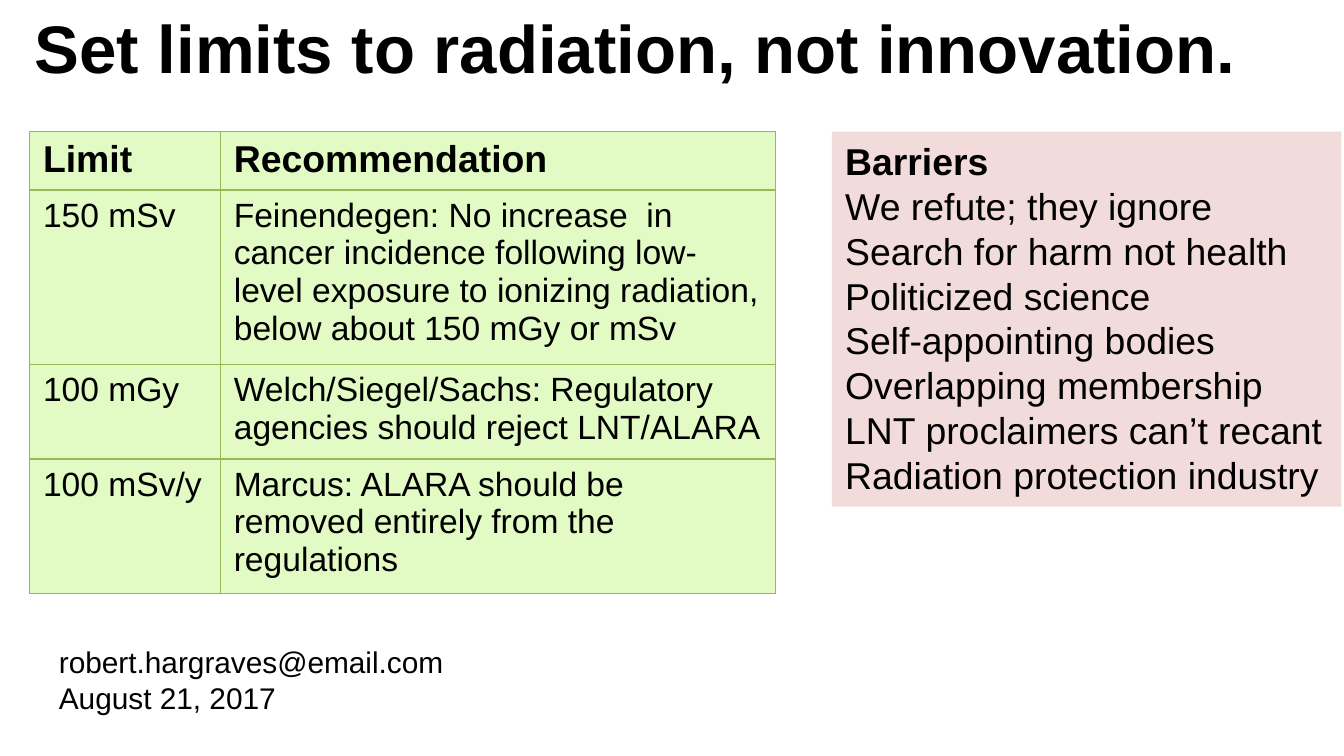
from dataclasses import dataclass

from lxml.etree import SubElement
from pptx import Presentation
from pptx.dml.color import RGBColor
from pptx.enum.shapes import MSO_SHAPE
from pptx.enum.text import MSO_ANCHOR, PP_ALIGN
from pptx.oxml.ns import qn
from pptx.slide import Slide
from pptx.table import _Cell
from pptx.text.text import TextFrame
from pptx.util import Inches, Pt

BLACK = RGBColor(0x00, 0x00, 0x00)
PINK = RGBColor(0xF2, 0xDC, 0xDB)
PALE_GREEN = RGBColor(0xE2, 0xFA, 0xC3)
BORDER_GREEN = RGBColor(0x98, 0xB9, 0x55)
FONT = "Arial"
SLIDE_WIDTH = 10
SLIDE_HEIGHT = SLIDE_WIDTH * 9 / 16


@dataclass(frozen=True)
class TextBlock:
    left: float
    top: float
    width: float
    height: float
    lines: tuple[str, ...]
    size: int
    bold_lines: int = 0
    fill: RGBColor | None = None


@dataclass(frozen=True)
class LimitRow:
    limit: str
    recommendation: str
    height: float
    size: int = 18
    bold: bool = False


BLOCKS = (
    TextBlock(0.16, 0, 9.79, 0.71, ("Set limits to radiation, not innovation.",), 36, 1),
    TextBlock(0.34, 4.74, 3.47, 0.64, ("robert.hargraves@email.com", "August 21, 2017"), 16),
    TextBlock(
        6.19, 0.98, 3.79, 2.79,
        (
            "Barriers",
            "We refute; they ignore",
            "Search for harm not health",
            "Politicized science",
            "Self-appointing bodies",
            "Overlapping membership",
            "LNT proclaimers can’t recant",
            "Radiation protection industry",
        ),
        20, 1, PINK,
    ),
)

COLUMN_WIDTHS = (1.42, 4.13)
ROWS = (
    LimitRow("Limit", "Recommendation", 0.43, 20, True),
    LimitRow(
        "150 mSv",
        "Feinendegen: No increase  in cancer incidence following low-level "
        "exposure to ionizing radiation, below about 150 mGy or mSv",
        1.3,
    ),
    LimitRow("100 mGy", "Welch/Siegel/Sachs: Regulatory agencies should reject LNT/ALARA", 0.7),
    LimitRow("100 mSv/y", "Marcus: ALARA should be removed entirely from the regulations", 1.0),
)


def write_lines(text_frame: TextFrame, lines: tuple[str, ...], size: int, bold_lines: int) -> None:
    text_frame.text = "\n".join(lines)
    text_frame.word_wrap = True
    for index, paragraph in enumerate(text_frame.paragraphs):
        paragraph.alignment = PP_ALIGN.LEFT
        for run in paragraph.runs:
            run.font.name = FONT
            run.font.size = Pt(size)
            run.font.bold = index < bold_lines
            run.font.color.rgb = BLACK


def add_text_block(slide: Slide, block: TextBlock) -> None:
    box = [Inches(length) for length in (block.left, block.top, block.width, block.height)]
    if block.fill is None:
        shape = slide.shapes.add_textbox(*box)
    else:
        shape = slide.shapes.add_shape(MSO_SHAPE.RECTANGLE, *box)
        shape.shadow.inherit = False
        shape.fill.solid()
        shape.fill.fore_color.rgb = block.fill
        shape.line.fill.background()
    shape.text_frame.vertical_anchor = MSO_ANCHOR.TOP
    write_lines(shape.text_frame, block.lines, block.size, block.bold_lines)


def add_borders(cell: _Cell) -> None:
    properties = cell._tc.get_or_add_tcPr()
    for side in ("a:lnL", "a:lnR", "a:lnT", "a:lnB"):
        line = SubElement(properties, qn(side), w=str(Pt(0.75)))
        fill = SubElement(line, qn("a:solidFill"))
        SubElement(fill, qn("a:srgbClr"), val=str(BORDER_GREEN))


def add_limits_table(slide: Slide) -> None:
    table = slide.shapes.add_table(
        len(ROWS), len(COLUMN_WIDTHS), Inches(0.22), Inches(0.98),
        Inches(sum(COLUMN_WIDTHS)), Inches(sum(row.height for row in ROWS)),
    ).table
    for column, width in zip(table.columns, COLUMN_WIDTHS):
        column.width = Inches(width)
    for table_row, row in zip(table.rows, ROWS):
        table_row.height = Inches(row.height)
        for cell, text in zip(table_row.cells, (row.limit, row.recommendation)):
            write_lines(cell.text_frame, (text,), row.size, int(row.bold))
            add_borders(cell)
            cell.fill.solid()
            cell.fill.fore_color.rgb = PALE_GREEN


def main() -> None:
    presentation = Presentation()
    presentation.slide_width = Inches(SLIDE_WIDTH)
    presentation.slide_height = Inches(SLIDE_HEIGHT)
    slide = presentation.slides.add_slide(presentation.slide_layouts[6])
    for block in BLOCKS:
        add_text_block(slide, block)
    add_limits_table(slide)
    presentation.save("out.pptx")


if __name__ == "__main__":
    main()
